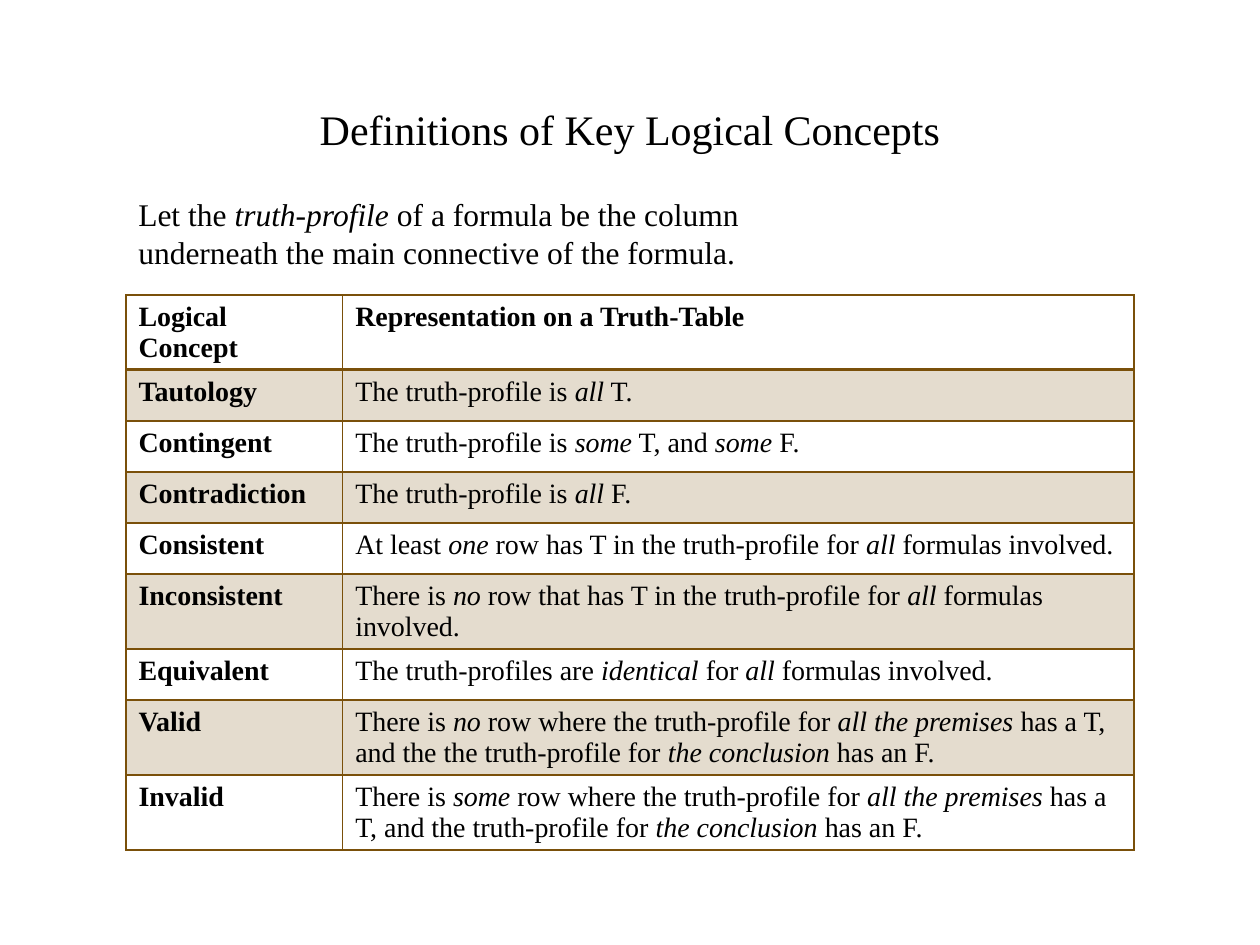
from dataclasses import dataclass

from lxml import etree
from pptx import Presentation
from pptx import util as u
from pptx.dml.color import RGBColor
from pptx.enum import text
from pptx.oxml.ns import qn


@dataclass(frozen=True)
class Theme:
    font: str = "Times New Roman"
    ink: str = "000000"
    brown: str = "7A500A"
    band_alpha: int = 20  # percent
    title_size: int = 24
    intro_size: int = 18
    table_size: int = 16
    thin: int = 1
    thick: int = 2


THEME = Theme()
MARGIN = u.Inches(1)
CONTENT_WIDTH = u.Inches(8)
COLUMN_WIDTHS = (1.72, 6.28)
ROW_HEIGHT = u.Pt(29.2)

# Asterisks enclose the words in italics
INTRO = ("Let the *truth-profile* of a formula be the column "
         "underneath the main connective of the formula.")
CONCEPTS = [
    ("Logical Concept", "Representation on a Truth-Table"),
    ("Tautology", "The truth-profile is *all* T."),
    ("Contingent", "The truth-profile is *some* T, and *some* F."),
    ("Contradiction", "The truth-profile is *all* F."),
    ("Consistent", "At least *one* row has T in the truth-profile for *all* formulas involved."),
    ("Inconsistent",
     "There is *no* row that has T in the truth-profile for *all* formulas involved."),
    ("Equivalent", "The truth-profiles are *identical* for *all *formulas involved."),
    ("Valid", "There is *no* row where the truth-profile for *all the premises *has a T, "
              "and the the truth-profile for *the conclusion* has an F."),
    ("Invalid", "There is *some* row where the truth-profile for *all the premises *has a T, "
                "and the truth-profile for *the conclusion *has an F."),
]


def write(para, content, size, bold=False):
    """Fill a paragraph, setting every second asterisk-separated part in italics."""
    para.font.name = THEME.font
    para.font.size = u.Pt(size)
    para.font.bold = bold
    para.font.color.rgb = RGBColor.from_string(THEME.ink)
    for index, part in enumerate(content.split("*")):
        if part:
            span = para.add_run()
            span.text = part
            if index % 2:
                span.font.italic = True


def add_title(page, content):
    title = page.shapes.title
    title.left, title.top = MARGIN, u.Inches(0.55)
    title.width, title.height = CONTENT_WIDTH, u.Inches(0.95)
    title.text_frame.vertical_anchor = text.MSO_ANCHOR.MIDDLE
    para = title.text_frame.paragraphs[0]
    para.alignment = text.PP_ALIGN.CENTER
    write(para, content, THEME.title_size)


def add_intro(page, content):
    box = page.shapes.add_textbox(MARGIN, u.Inches(1.5), u.Inches(5.73), u.Inches(0.71))
    box.text_frame.word_wrap = True
    box.text_frame.auto_size = text.MSO_AUTO_SIZE.SHAPE_TO_FIT_TEXT
    write(box.text_frame.paragraphs[0], content, THEME.intro_size)


def set_borders(cell, top, bottom):
    widths = {"L": THEME.thin, "R": THEME.thin, "T": top, "B": bottom}
    properties = cell._tc.get_or_add_tcPr()
    for side, width in widths.items():
        line = etree.SubElement(properties, qn(f"a:ln{side}"), w=str(u.Pt(width)))
        fill = etree.SubElement(line, qn("a:solidFill"))
        etree.SubElement(fill, qn("a:srgbClr"), val=THEME.brown)


def set_band(cell, shaded):
    if not shaded:
        cell.fill.background()
        return
    cell.fill.solid()
    cell.fill.fore_color.rgb = RGBColor.from_string(THEME.brown)
    colour = cell._tc.tcPr.find(qn("a:solidFill")).find(qn("a:srgbClr"))
    etree.SubElement(colour, qn("a:alpha"), val=str(THEME.band_alpha * 1000))


def add_concept_table(page, rows):
    frame = page.shapes.add_table(len(rows), len(COLUMN_WIDTHS), MARGIN, u.Inches(2.34),
                                  CONTENT_WIDTH, ROW_HEIGHT * len(rows))
    table = frame.table
    table.horz_banding = False
    for column, width in zip(table.columns, COLUMN_WIDTHS):
        column.width = u.Inches(width)
    for r, row in enumerate(rows):
        table.rows[r].height = ROW_HEIGHT
        for c, content in enumerate(row):
            cell = table.cell(r, c)
            # The rule under the header row is heavier
            set_borders(cell, top=THEME.thick if r == 1 else THEME.thin,
                        bottom=THEME.thick if r == 0 else THEME.thin)
            set_band(cell, shaded=r % 2 == 1)
            write(cell.text_frame.paragraphs[0], content, THEME.table_size,
                  bold=r == 0 or c == 0)


def main():
    deck = Presentation()
    deck.slide_width, deck.slide_height = u.Inches(10), u.Inches(7.5)
    page = deck.slides.add_slide(deck.slide_layouts[5])
    add_title(page, "Definitions of Key Logical Concepts")
    add_concept_table(page, CONCEPTS)
    add_intro(page, INTRO)
    deck.save("out.pptx")


if __name__ == "__main__":
    main()
